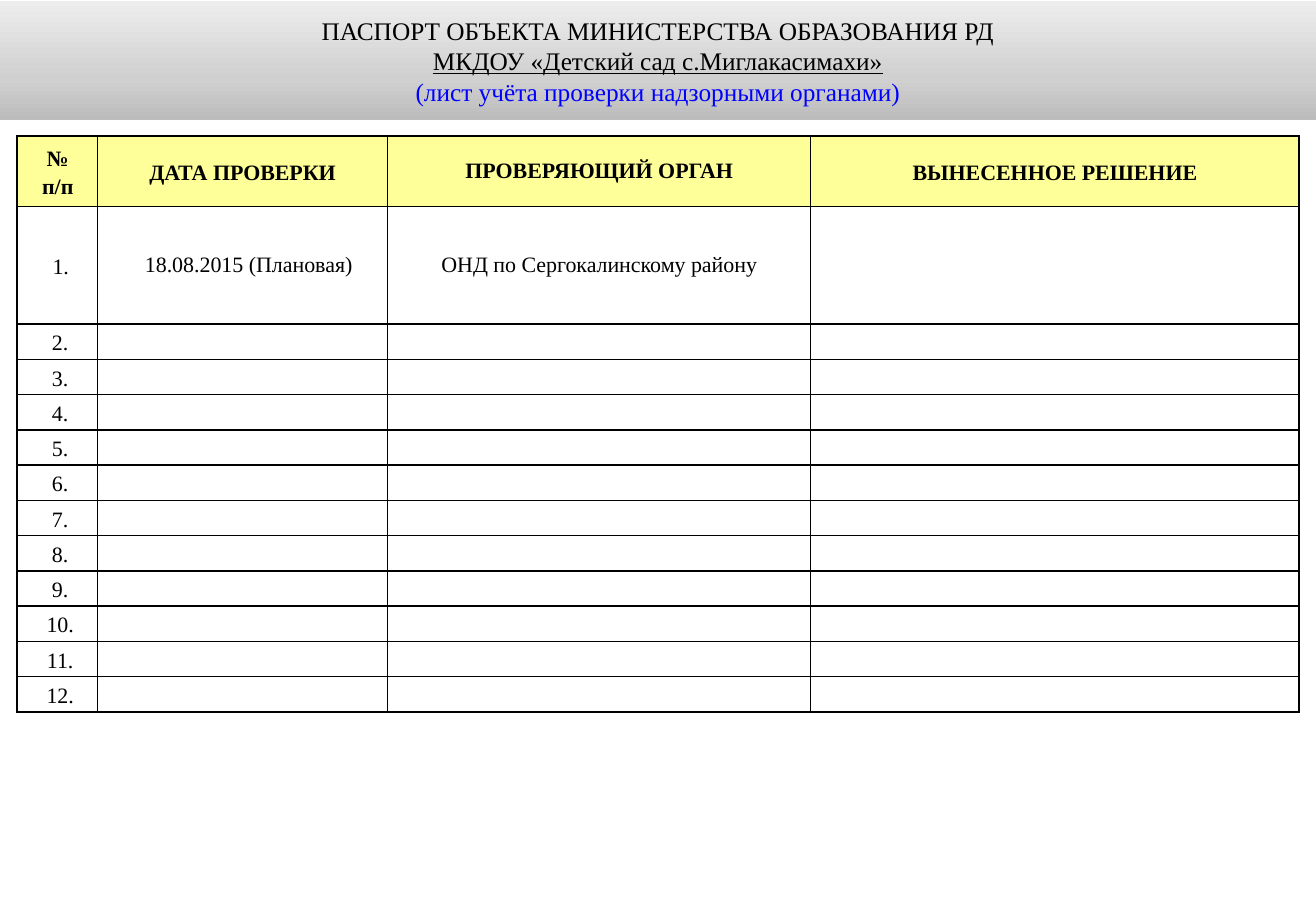
from copy import deepcopy
from dataclasses import dataclass

from lxml.etree import SubElement
from pptx import Presentation
from pptx.dml.color import RGBColor
from pptx.enum.text import MSO_ANCHOR, MSO_AUTO_SIZE, PP_ALIGN
from pptx.oxml.ns import qn
from pptx.util import Inches, Pt

WIDE, HIGH = Inches(10.83), Inches(7.5)
FONT = "Times New Roman"
HEX = {"ink": "000000", "blue": "0000FF", "head": "FFFF99", "body": "FFFFFF"}
FADE = [(0, "BCBCBC"), (0.35, "D0D0D0"), (1, "EDEDED")]

# Shares of the slide, in percent
COLS = [6.1, 22.07, 32.13, 37.12]
ROWS = [7.73, 12.93] + [3.87] * 11


@dataclass
class Item:
    text: str = ""
    indent: float = 0
    lead: float | Pt = 1.15


HEAD = [
    Item("№\nп/п", 0.01),
    Item("ДАТА ПРОВЕРКИ"),
    Item("ПРОВЕРЯЮЩИЙ ОРГАН", lead=Pt(14)),
    Item("ВЫНЕСЕННОЕ РЕШЕНИЕ"),
]
FIRST = [
    Item("1.", 0.06),
    Item("18.08.2015 (Плановая)", 0.1, Pt(14)),
    Item("ОНД по Сергокалинскому району", lead=Pt(14)),
    Item(),
]
REST = [[Item(f"{num}.", 0.05), Item(), Item(), Item()] for num in range(2, 13)]


def across(share: float) -> int:
    return round(WIDE * share / 100)


def down(share: float) -> int:
    return round(HIGH * share / 100)


def write(para, text: str, size=13, color="ink", bold=False, under=False,
          indent=0.0, lead=None) -> None:
    para.alignment = PP_ALIGN.CENTER
    para.line_spacing = lead
    if indent:
        props = para._p.get_or_add_pPr()
        props.set("marL", str(Inches(indent)))
        props.set("indent", "0")
    if not text:
        # Keeps an empty cell as low as its row
        SubElement(para._p, qn("a:endParaRPr"), sz=str(size * 100))
        return
    run = para.add_run()
    run.text = text
    font = run.font
    font.name, font.size, font.bold, font.underline = FONT, Pt(size), bold, under
    font.color.rgb = RGBColor.from_string(HEX[color])


def fade(shape) -> None:
    """Fill the shape with the upward grey gradient."""
    shape.fill.gradient()
    shape.fill.gradient_angle = 90
    stops = shape.fill.gradient_stops
    group = shape.element.spPr.find(".//" + qn("a:gsLst"))
    group.append(deepcopy(group[-1]))
    stops = shape.fill.gradient_stops
    for stop, (place, color) in zip(stops, FADE):
        stop.position = place
        stop.color.rgb = RGBColor.from_string(color)


def border(cell) -> None:
    props = cell._tc.get_or_add_tcPr()
    for spot, side in enumerate(("lnL", "lnR", "lnT", "lnB")):
        line = SubElement(props, qn(f"a:{side}"), w=str(Pt(1)))
        fill = SubElement(line, qn("a:solidFill"))
        SubElement(fill, qn("a:srgbClr"), val=HEX["ink"])
        props.remove(line)
        props.insert(spot, line)


def fill_cell(cell, item: Item, head: bool) -> None:
    cell.fill.solid()
    cell.fill.fore_color.rgb = RGBColor.from_string(HEX["head" if head else "body"])
    border(cell)
    cell.vertical_anchor = MSO_ANCHOR.MIDDLE
    cell.margin_left = cell.margin_right = Inches(0.03)
    cell.margin_top = cell.margin_bottom = 0
    frame = cell.text_frame
    for num, line in enumerate(item.text.split("\n")):
        para = frame.add_paragraph() if num else frame.paragraphs[0]
        write(para, line, bold=head, indent=item.indent, lead=item.lead)


def add_title(slide) -> None:
    title = slide.shapes.title
    title.left, title.top = 0, down(0.13)
    title.width, title.height = WIDE, down(13.07)
    fade(title)
    frame = title.text_frame
    frame.word_wrap = True
    frame.auto_size = MSO_AUTO_SIZE.NONE
    frame.vertical_anchor = MSO_ANCHOR.MIDDLE
    write(frame.paragraphs[0], "ПАСПОРТ ОБЪЕКТА МИНИСТЕРСТВА ОБРАЗОВАНИЯ РД", size=15)
    write(frame.add_paragraph(), "МКДОУ «Детский сад с.Миглакасимахи»",
          size=15, under=True)
    write(frame.add_paragraph(), "(лист учёта проверки надзорными органами)",
          size=15, color="blue")


def add_log(slide) -> None:
    """Add the table of inspections."""
    table = slide.shapes.add_table(
        len(ROWS), len(COLS), across(1.29), down(14.93),
        across(sum(COLS)), down(sum(ROWS))).table
    for col, share in zip(table.columns, COLS):
        col.width = across(share)
    for row, share in zip(table.rows, ROWS):
        row.height = down(share)
    for row, items in enumerate([HEAD, FIRST, *REST]):
        for col, item in enumerate(items):
            fill_cell(table.cell(row, col), item, head=row == 0)


def main() -> None:
    deck = Presentation()
    deck.slide_width, deck.slide_height = WIDE, HIGH
    slide = deck.slides.add_slide(deck.slide_layouts[5])
    add_title(slide)
    add_log(slide)
    deck.save("out.pptx")


if __name__ == "__main__":
    main()
